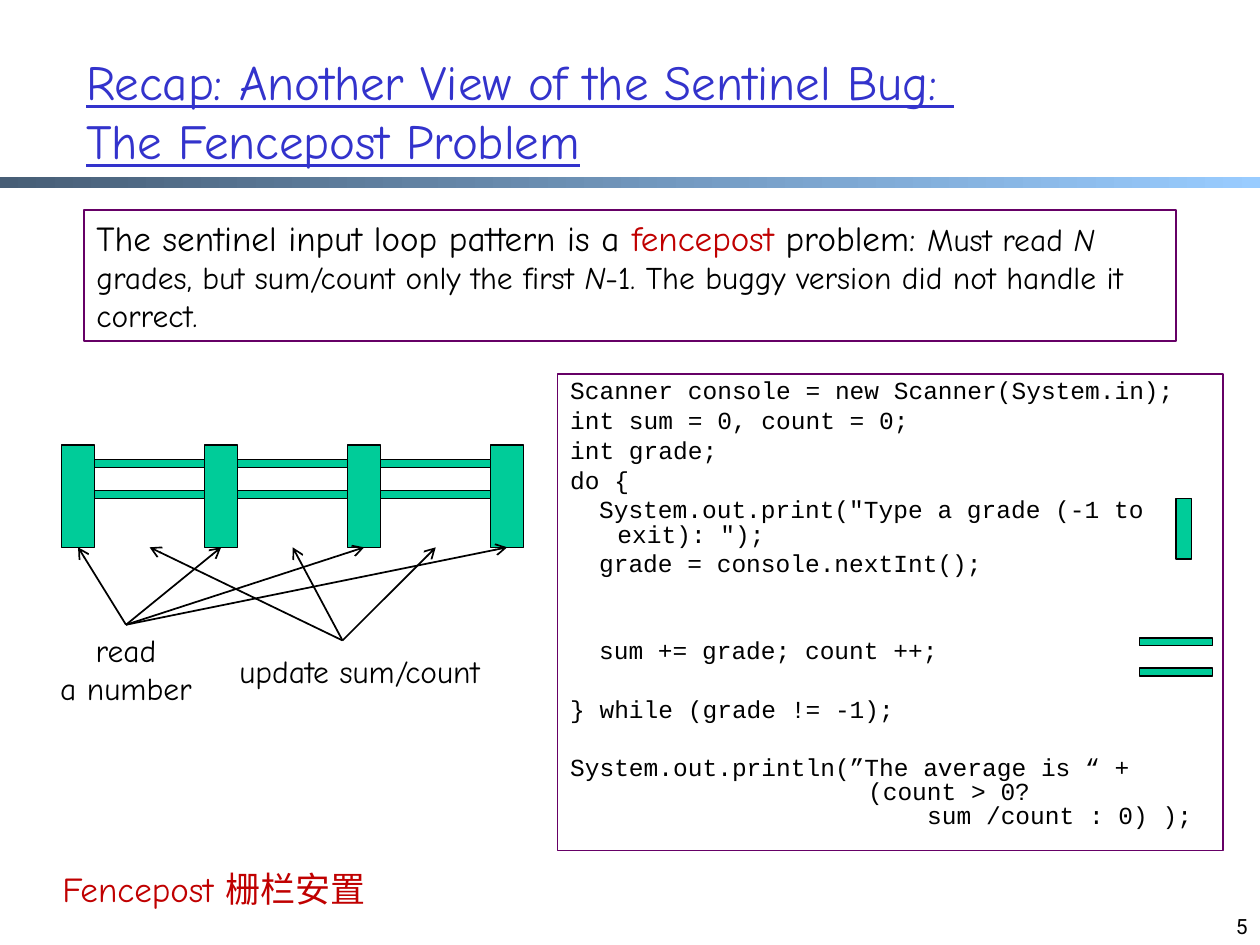
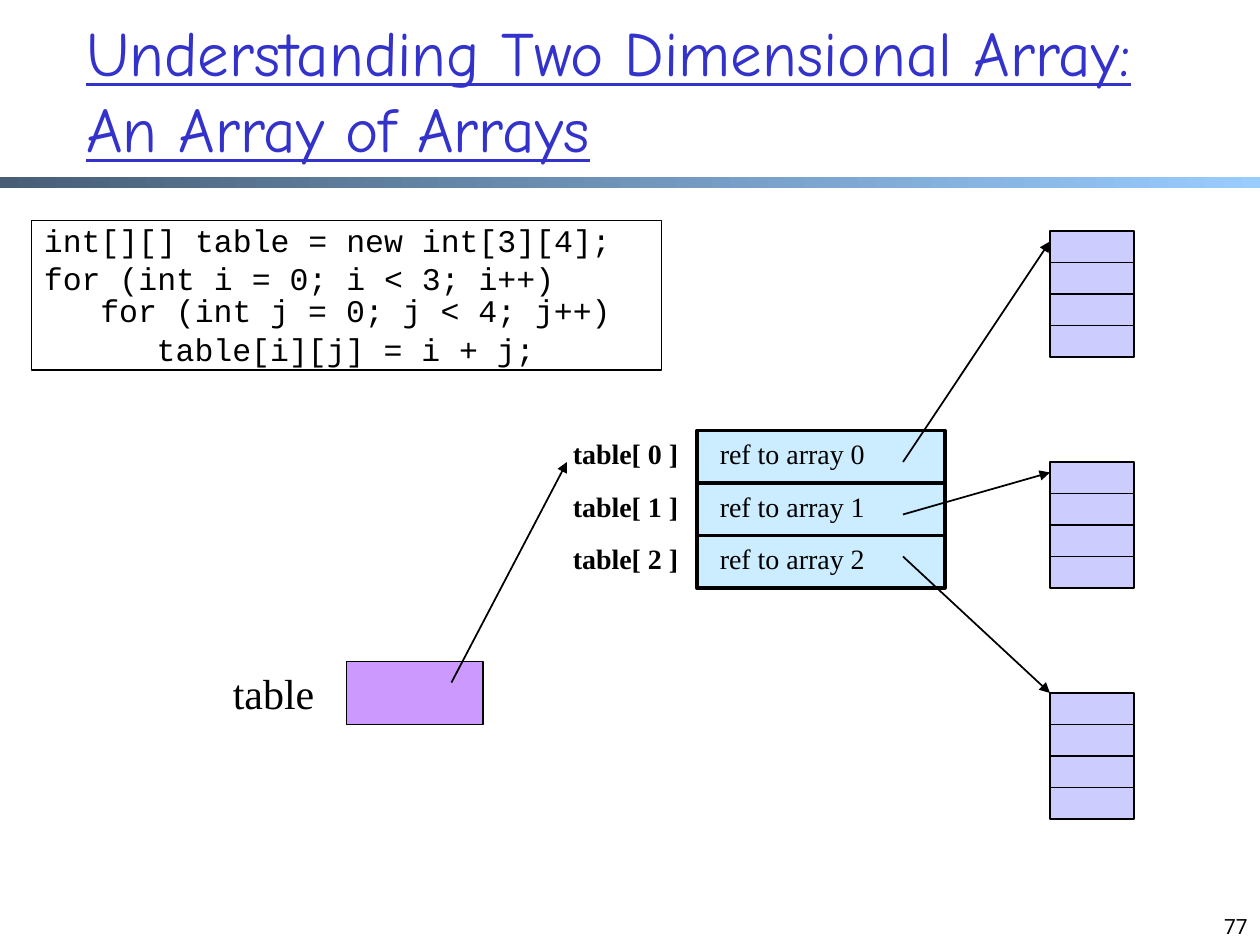
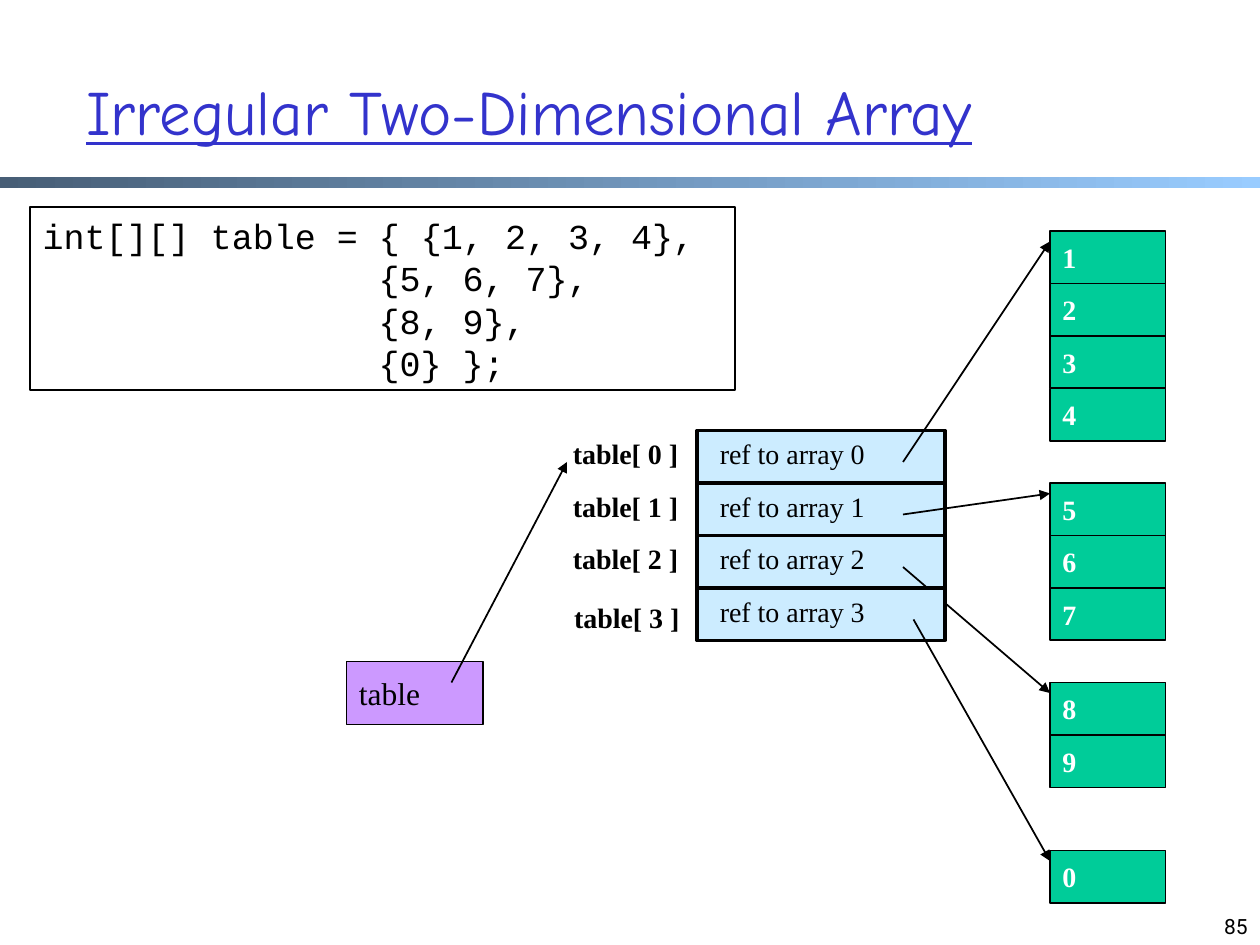
from dataclasses import dataclass

from lxml.etree import SubElement
from pptx import Presentation
from pptx.dml.color import RGBColor
from pptx.enum.shapes import MSO_CONNECTOR, MSO_SHAPE
from pptx.enum.text import MSO_ANCHOR, MSO_AUTO_SIZE, PP_ALIGN
from pptx.oxml.ns import qn
from pptx.util import Pt

PX = 9525


@dataclass(frozen=True)
class Theme:
    title: RGBColor = RGBColor(0x33, 0x33, 0xCC)
    ink: RGBColor = RGBColor(0, 0, 0)
    white: RGBColor = RGBColor(255, 255, 255)
    accent: RGBColor = RGBColor(0xC0, 0, 0)
    frame: RGBColor = RGBColor(0x66, 0, 0x66)
    green: RGBColor = RGBColor(0, 0xCC, 0x99)
    sky: RGBColor = RGBColor(0xCC, 0xEC, 0xFF)
    violet: RGBColor = RGBColor(0xCC, 0x99, 0xFF)
    lilac: RGBColor = RGBColor(0xCC, 0xCC, 0xFF)
    band_dark: RGBColor = RGBColor(0x47, 0x5E, 0x76)
    band_light: RGBColor = RGBColor(0x99, 0xCC, 0xFF)
    sans: str = "Comic Neue"
    mono: str = "Courier New"
    serif: str = "Times New Roman"
    digits: str = "Roboto"
    title_size: int = 36
    long_title_size: int = 28
    variable: int = 24
    lead: int = 20
    text: int = 18
    cell: int = 16
    code: int = 14
    number: int = 12


T = Theme()


def box(s, rect, text="", size=T.text, font=T.sans, color=T.ink, fill=None, line=None,
        weight=1, align=PP_ALIGN.LEFT, anchor=MSO_ANCHOR.TOP, bold=False, wrap=True):
    x, y, w, h = (v * PX for v in rect)
    if fill or line:
        sp = s.shapes.add_shape(MSO_SHAPE.RECTANGLE, x, y, w, h)
        sp.shadow.inherit = False
        if fill:
            sp.fill.solid()
            sp.fill.fore_color.rgb = fill
        else:
            sp.fill.background()
        sp.line.color.rgb = line
        sp.line.width = Pt(weight)
    else:
        sp = s.shapes.add_textbox(x, y, w, h)
    tf = sp.text_frame
    tf.word_wrap = wrap
    tf.vertical_anchor = anchor
    tf.text = text
    for p in tf.paragraphs:
        p.alignment = align
        for r in p.runs:
            r.font.size, r.font.name, r.font.bold = Pt(size), font, bold
            r.font.color.rgb = color
    return sp


def arrow(s, start, end, head="triangle"):
    c = s.shapes.add_connector(MSO_CONNECTOR.STRAIGHT, *(v * PX for v in start + end))
    c.line.color.rgb = T.ink
    c.line.width = Pt(1)
    sp_pr = c.element.spPr
    SubElement(sp_pr.find(qn("a:ln")), qn("a:tailEnd"), type=head)
    SubElement(sp_pr, qn("a:effectLst"))
    return c


prs = Presentation()
prs.slide_width, prs.slide_height = 960 * PX, 720 * PX
layout = prs.slide_layouts[5]

# Code lines: text, first-line indent, left margin, points before
pages = [
    dict(title="Recap: Another View of the Sentinel Bug: \nThe Fencepost Problem",
         title_rect=(56, 24, 872, 120), title_size=T.long_title_size, number="5",
         code_rect=(425, 285, 507, 363), code_size=T.code, spacing=0.82,
         frame=T.frame, weight=0.75, code=[
             ("Scanner console = new Scanner(System.in);", 0, 36, 3.3),
             ("int sum = 0, count = 0;", 0, 36, 3.3),
             ("int grade;", 0, 36, 3.3),
             ("do {", 0, 36, 3.3),
             ('System.out.print("Type a grade (-1 to exit): ");', 22, 36, 3.3),
             ("grade = console.nextInt();", 22, 36, 3.3),
             ("sum += grade; count ++;", 22, 36, 35.9),
             ("} while (grade != -1);", 0, 36, 19.6),
             ("System.out.println(”The average is “ +", 0, 36, 19.6),
             ("(count > 0?", 227, 227, 0),
             ("sum /count : 0) );", 272, 272, 0)]),
    dict(title="Understanding Two Dimensional Array: An Array of Arrays",
         title_rect=(56, 8, 816, 120), title_size=T.title_size, number="77",
         code_rect=(24, 168, 480, 114), code_size=T.text, spacing=0.84,
         frame=T.ink, weight=1, code=[
             ("int[][] table = new int[3][4];", 0, 0, 4),
             ("for (int i = 0; i < 3; i++)", 0, 0, 4),
             ("for (int j = 0; j < 4; j++)", 43, 43, 0),
             ("table[i][j] = i + j;", 86, 86, 4)]),
    dict(title="Irregular Two-Dimensional Array",
         title_rect=(56, 24, 816, 120), title_size=T.title_size, number="85",
         code_rect=(23, 158, 537, 139), code_size=T.lead, spacing=Pt(24.3),
         frame=T.ink, weight=1, code=[
             ("int[][] table = { {1, 2, 3, 4},", 0, 0, 0),
             ("{5, 6, 7},", 256, 256, 0),
             ("{8, 9},", 256, 256, 0),
             ("{0} };", 256, 256, 0)]),
]

slides = []
for page in pages:
    s = prs.slides.add_slide(layout)
    slides.append(s)
    title = s.shapes.title
    title.left, title.top, title.width, title.height = (v * PX for v in page["title_rect"])
    tf = title.text_frame
    tf.text = page["title"]
    tf.auto_size = MSO_AUTO_SIZE.NONE
    tf.vertical_anchor = MSO_ANCHOR.MIDDLE
    for p in tf.paragraphs:
        p.alignment = PP_ALIGN.LEFT
        for r in p.runs:
            r.font.size, r.font.name, r.font.underline = Pt(page["title_size"]), T.sans, True
            r.font.color.rgb = T.title
    box(s, (736, 672, 224, 48), page["number"], T.number, T.digits,
        align=PP_ALIGN.RIGHT, anchor=MSO_ANCHOR.BOTTOM)
    sp = box(s, page["code_rect"], "\n".join(row[0] for row in page["code"]),
             page["code_size"], T.mono, line=page["frame"], weight=page["weight"])
    for p, (_, first, margin, before) in zip(sp.text_frame.paragraphs, page["code"]):
        p.line_spacing = page["spacing"]
        p.space_before = Pt(before)
        p_pr = p._p.get_or_add_pPr()
        p_pr.set("marL", str(margin * PX))
        p_pr.set("indent", str((first - margin) * PX))

fence, regular, irregular = slides

band = fence.shapes.add_shape(MSO_SHAPE.RECTANGLE, 0, 135 * PX, 960 * PX, 8 * PX)
band.shadow.inherit = False
band.line.fill.background()
band.fill.gradient()
band.fill.gradient_angle = 0
for stop, color in zip(band.fill.gradient_stops, (T.band_dark, T.band_light)):
    stop.color.rgb = color
band.element.nvSpPr.cNvPr.set("id", "20")
layout.shapes.element.insert(2, band.element)

sp = box(fence, (64, 160, 832, 100), line=T.frame, weight=0.75)
p = sp.text_frame.paragraphs[0]
for text, size, color, italic in [
        ("The sentinel input loop pattern is a ", T.lead, T.ink, False),
        ("fencepost", T.lead, T.accent, False),
        (" problem: ", T.lead, T.ink, False),
        ("Must read ", T.text, T.ink, False),
        ("N", T.text, T.ink, True),
        (" grades, but sum/count only the first ", T.text, T.ink, False),
        ("N", T.text, T.ink, True),
        ("-1. The buggy version did not handle it correct.", T.text, T.ink, False)]:
    r = p.add_run()
    r.text = text
    r.font.size, r.font.name, r.font.italic = Pt(size), T.sans, italic
    r.font.color.rgb = color

read = box(fence, (35, 476, 122, 68), "read\na number", align=PP_ALIGN.CENTER, wrap=False)
box(fence, (163, 492, 222, 38), "update sum/count", align=PP_ALIGN.CENTER, wrap=False)
box(fence, (38, 656, 263, 42), "Fencepost 栅栏安置", T.lead, color=T.accent, wrap=False)

post_w, post_step = 25, 109
rail_w = post_step - post_w
bars = [(896, 380, 12, 46), (868, 486, 56, 6), (868, 509, 56, 6)]
for i in range(4):
    x = 47 + i * post_step
    post = box(fence, (x, 339, post_w, 78), fill=T.green, line=T.ink, weight=0.75)
    c = arrow(fence, (96, 476), (x + post_w // 2, 417), "arrow")
    c.begin_connect(read, 0)
    c.end_connect(post, 2)
    if i < 3:
        rail_x = x + post_w
        bars += [(rail_x, y, rail_w, 6) for y in (350, 374)]
        arrow(fence, (261, 488), (rail_x + rail_w // 2, 417), "arrow")
for rect in bars:
    box(fence, rect, fill=T.green, line=T.ink, weight=0.75)

box(regular, (168, 504, 82, 49), "table", T.variable, T.serif, wrap=False)
diagrams = [
    (regular, "", T.lilac, 64, 24, [
        ((427, 328), (688, 352), 184, 176, [""] * 4),
        ((427, 368), (688, 392), 360, 352, [""] * 4),
        ((427, 408), (688, 424), 528, 528, [""] * 4)]),
    (irregular, "table", T.green, 88, 40, [
        ((427, 328), (688, 352), 184, 176, "1234"),
        ((427, 368), (688, 392), 376, 368, "567"),
        ((427, 408), (688, 432), 528, 520, "89"),
        ((428, 453), (696, 472), 656, 648, "0")]),
]
for s, name, fill, cell_w, cell_h, rows in diagrams:
    box(s, (264, 504, 104, 48), name, T.text, T.serif, fill=T.violet, line=T.ink,
        anchor=MSO_ANCHOR.MIDDLE)
    arrow(s, (344, 520), (432, 352))
    for i, (label_at, start, end_y, top, values) in enumerate(rows):
        y = 328 + 40 * i
        box(s, (531, y, 189, 40), fill=T.sky, line=T.ink, weight=2)
        box(s, (539, y, 168, 36), f"ref to array {i}", T.cell, T.serif)
        box(s, label_at + (100, 36), f"table[ {i} ]", T.cell, T.serif, bold=True, wrap=False)
        for j, value in enumerate(values):
            box(s, (800, top + j * cell_h, cell_w, cell_h), value, T.cell, T.serif, T.white,
                fill=fill, line=T.ink, anchor=MSO_ANCHOR.MIDDLE, bold=True)
        arrow(s, start, (800, end_y))

prs.save("out.pptx")
